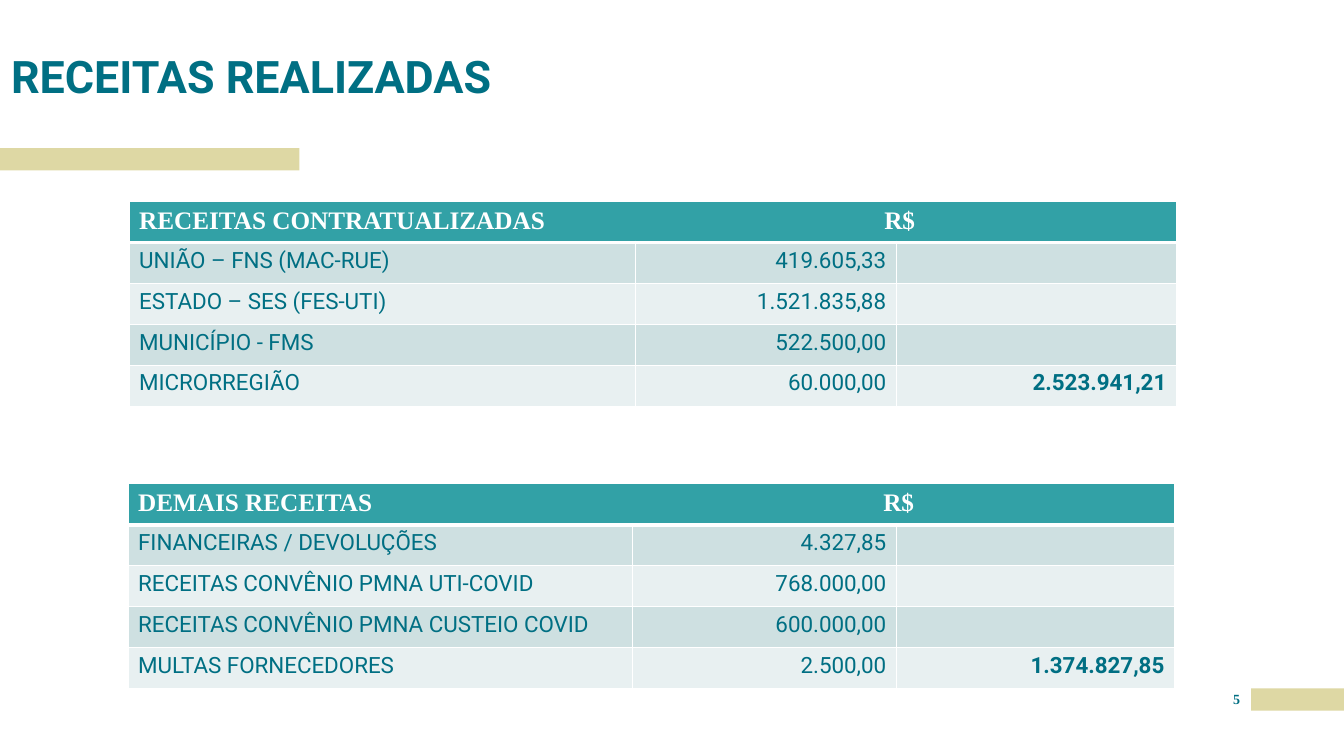
from lxml import etree
from pptx import Presentation
from pptx.dml.color import RGBColor
from pptx.enum.shapes import MSO_SHAPE
from pptx.enum.text import MSO_ANCHOR, PP_ALIGN
from pptx.oxml.ns import qn
from pptx.util import Inches, Pt

RECTANGLE = MSO_SHAPE.RECTANGLE
TOP, BOTTOM = MSO_ANCHOR.TOP, MSO_ANCHOR.BOTTOM
LEFT, CENTER, RIGHT = PP_ALIGN.LEFT, PP_ALIGN.CENTER, PP_ALIGN.RIGHT

CONTRACTED_ROWS = [
    ("UNIÃO – FNS (MAC-RUE)", "419.605,33", ""),
    ("ESTADO – SES (FES-UTI)", "1.521.835,88", ""),
    ("MUNICÍPIO - FMS", "522.500,00", ""),
    ("MICRORREGIÃO", "60.000,00", "2.523.941,21"),
]
OTHER_ROWS = [
    ("FINANCEIRAS / DEVOLUÇÕES", "4.327,85", ""),
    ("RECEITAS CONVÊNIO PMNA UTI-COVID", "768.000,00", ""),
    ("RECEITAS CONVÊNIO PMNA CUSTEIO COVID", "600.000,00", ""),
    ("MULTAS FORNECEDORES", "2.500,00", "1.374.827,85"),
]


def color(hex_string):
    return RGBColor.from_string(hex_string)


class RevenueSlide:
    SANS, SERIF = "Roboto", "Times New Roman"
    TEAL, WHITE, SAND = "006F83", "FFFFFF", "DED8A4"
    HEADER, BANDS = "32A1A6", ("CEE0E1", "E8F0F1")
    TABLE_HEIGHT = 2.03
    CURRENCY_TAB = 7.39

    def __init__(self, presentation):
        self.slide = presentation.slides.add_slide(presentation.slide_layouts[6])

    def bar(self, left, top, width, height):
        shape = self.slide.shapes.add_shape(
            RECTANGLE, Inches(left), Inches(top), Inches(width), Inches(height))
        shape.shadow.inherit = False
        shape.fill.solid()
        shape.fill.fore_color.rgb = color(self.SAND)
        shape.line.fill.background()

    def style_text(self, paragraph, text, size, font, hex_string, bold, alignment=LEFT):
        paragraph.text = text
        paragraph.alignment = alignment
        for run in paragraph.runs:
            run.font.size = Pt(size)
            run.font.name = font
            run.font.bold = bold
            run.font.color.rgb = color(hex_string)

    def text(self, box, text, size, font, alignment=LEFT, anchor=TOP, spacing=1.0):
        shape = self.slide.shapes.add_textbox(*map(Inches, box))
        frame = shape.text_frame
        frame.word_wrap = True
        frame.vertical_anchor = anchor
        frame.margin_left = frame.margin_top = 0
        frame.margin_right = frame.margin_bottom = 0
        paragraph = frame.paragraphs[0]
        paragraph.line_spacing = spacing
        self.style_text(paragraph, text, size, font, self.TEAL, True, alignment)

    def paint_cell(self, cell, fill, top=1, bottom=1):
        """Draw the white borders, then the fill, as the cell schema orders them."""
        properties = cell._tc.get_or_add_tcPr()
        for side, width in (("L", 1), ("R", 1), ("T", top), ("B", bottom)):
            line = etree.SubElement(properties, qn(f"a:ln{side}"), w=str(Pt(width)))
            solid = etree.SubElement(line, qn("a:solidFill"))
            etree.SubElement(solid, qn("a:srgbClr"), val=self.WHITE)
        cell.fill.solid()
        cell.fill.fore_color.rgb = color(fill)

    def add_tab_stop(self, paragraph, position):
        tab_list = etree.SubElement(paragraph._p.get_or_add_pPr(), qn("a:tabLst"))
        etree.SubElement(tab_list, qn("a:tab"), pos=str(Inches(position)), algn="l")

    def table(self, left, top, widths, heading, rows):
        row_count = len(rows) + 1
        table = self.slide.shapes.add_table(
            row_count, len(widths), Inches(left), Inches(top),
            Inches(sum(widths)), Inches(self.TABLE_HEIGHT)).table
        for column, width in zip(table.columns, widths):
            column.width = Inches(width)
        for row in table.rows:
            row.height = Inches(self.TABLE_HEIGHT / row_count)

        for cell in table.rows[0].cells:
            self.paint_cell(cell, self.HEADER, bottom=3)
        header = table.cell(0, 0)
        header.merge(table.cell(0, len(widths) - 1))
        paragraph = header.text_frame.paragraphs[0]
        self.style_text(paragraph, f"{heading}\tR$", 18, self.SERIF, self.WHITE, True)
        self.add_tab_stop(paragraph, self.CURRENCY_TAB)

        for row_index, values in enumerate(rows, start=1):
            for column_index, value in enumerate(values):
                cell = table.cell(row_index, column_index)
                self.paint_cell(cell, self.BANDS[(row_index - 1) % 2],
                                top=3 if row_index == 1 else 1)
                self.style_text(cell.text_frame.paragraphs[0], value, 16, self.SANS,
                                self.TEAL, column_index == 2,
                                RIGHT if column_index else LEFT)


def main():
    presentation = Presentation()
    presentation.slide_width = Inches(13.33)
    presentation.slide_height = Inches(7.5)

    slide = RevenueSlide(presentation)
    slide.bar(12.41, 6.83, 0.92, 0.22)
    slide.bar(0, 1.47, 2.97, 0.22)
    slide.text((0.11, 0, 9.34, 1.02), "RECEITAS REALIZADAS", 32, slide.SANS,
               anchor=BOTTOM, spacing=0.9)
    slide.text((12.12, 6.85, 0.29, 0.25), "5", 10, slide.SERIF, CENTER)
    slide.table(1.28, 2, (5.02, 2.59, 2.78), "RECEITAS CONTRATUALIZADAS", CONTRACTED_ROWS)
    slide.table(1.27, 4.8, (5, 2.62, 2.76), "DEMAIS RECEITAS", OTHER_ROWS)

    presentation.save("out.pptx")


if __name__ == "__main__":
    main()
